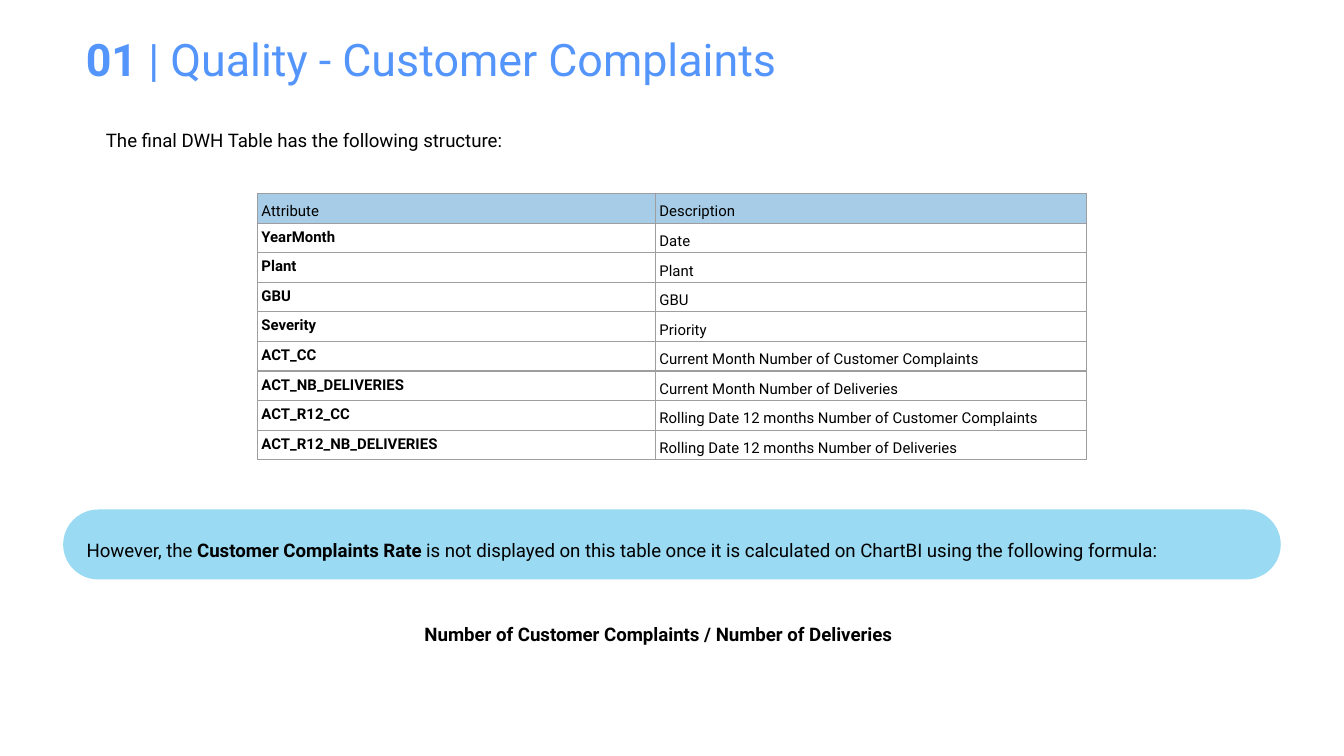
from lxml import etree
from pptx import Presentation
from pptx import util as u
from pptx.dml.color import RGBColor
from pptx.enum import shapes, text
from pptx.oxml import ns

WIDTH = 10
HEIGHT = WIDTH * 9 / 16
GRID = 100  # columns and rows across the slide
FONT = "Roboto"
BLACK, TITLE_BLUE, HEADER_BLUE = "000000", "5495FC", "A6CCE7"
BANNER_BLUE, BORDER_GREY = "81D1F0", "9E9E9E"
TOP, MIDDLE, BOTTOM = (text.MSO_ANCHOR.TOP, text.MSO_ANCHOR.MIDDLE,
                       text.MSO_ANCHOR.BOTTOM)
ATTRIBUTES = [
    ("Attribute", "Description"),
    ("YearMonth", "Date"),
    ("Plant", "Plant"),
    ("GBU", "GBU"),
    ("Severity", "Priority"),
    ("ACT_CC", "Current Month Number of Customer Complaints"),
    ("ACT_NB_DELIVERIES", "Current Month Number of Deliveries"),
    ("ACT_R12_CC", "Rolling Date 12 months Number of Customer Complaints"),
    ("ACT_R12_NB_DELIVERIES", "Rolling Date 12 months Number of Deliveries"),
]


def color(value):
    return RGBColor.from_string(value)


def grid_box(left, top, width, height):
    """Turn grid columns and rows into lengths."""
    return [u.Inches(part * side / GRID) for part, side in
            zip((left, top, width, height), (WIDTH, HEIGHT) * 2)]


def apply(target, values):
    for name, value in values.items():
        setattr(target, name, value)


def margins(horizontal, vertical):
    return {"margin_left": u.Inches(horizontal), "margin_right": u.Inches(horizontal),
            "margin_top": u.Inches(vertical), "margin_bottom": u.Inches(vertical)}


def write(frame, runs, size, ink=BLACK, spacing=1.0):
    """Fill the first paragraph with (words, bold) runs."""
    paragraph = frame.paragraphs[0]
    apply(paragraph, {"alignment": text.PP_ALIGN.LEFT, "line_spacing": spacing})
    for words, bold in runs:
        run = paragraph.add_run()
        run.text = words
        apply(run.font, {"name": FONT, "size": u.Pt(size), "bold": bold})
        run.font.color.rgb = color(ink)


def add_text(slide, box, runs, size, ink=BLACK, anchor=TOP):
    frame = slide.shapes.add_textbox(*box).text_frame
    apply(frame, {"word_wrap": True, "vertical_anchor": anchor, **margins(0.1, 0.1)})
    write(frame, runs, size, ink)


def add_borders(cell):
    properties = cell._tc.get_or_add_tcPr()
    for position, side in enumerate(("a:lnL", "a:lnR", "a:lnT", "a:lnB")):
        line = etree.Element(ns.qn(side), w=str(u.Pt(0.75)))
        fill = etree.SubElement(line, ns.qn("a:solidFill"))
        etree.SubElement(fill, ns.qn("a:srgbClr"), val=BORDER_GREY)
        properties.insert(position, line)


def add_attribute_table(slide, box):
    left, top, width, height = box
    table = slide.shapes.add_table(len(ATTRIBUTES), 2, *box).table
    apply(table, {"first_row": False, "horz_banding": False})
    table.columns[0].width = int(width * 0.48)
    table.columns[1].width = width - table.columns[0].width
    for row in table.rows:
        row.height = height // len(ATTRIBUTES)
    for row, words in enumerate(ATTRIBUTES):
        for column, label in enumerate(words):
            cell = table.cell(row, column)
            is_header, is_name = row == 0, row > 0 and column == 0
            apply(cell, {"vertical_anchor": TOP if is_name else BOTTOM,
                         **margins(0.03, 0.02)})
            if is_header:
                cell.fill.solid()
                cell.fill.fore_color.rgb = color(HEADER_BLUE)
            else:
                cell.fill.background()
            write(cell.text_frame, [(label, is_name)], 8,
                  spacing=1.0 if is_header else 1.15)
            add_borders(cell)


def add_banner(slide, box, runs):
    banner = slide.shapes.add_shape(shapes.MSO_SHAPE.ROUNDED_RECTANGLE, *box)
    banner.adjustments[0] = 0.5
    banner.shadow.inherit = False
    banner.line.fill.background()
    banner.fill.solid()
    banner.fill.fore_color.rgb = color(BANNER_BLUE)
    fill = banner._element.spPr.find(ns.qn("a:solidFill"))
    etree.SubElement(fill[0], ns.qn("a:alpha"), val="80000")
    apply(banner.text_frame, {"word_wrap": True, "vertical_anchor": MIDDLE,
                              **margins(0.1, 0.05)})
    write(banner.text_frame, runs, 10, spacing=1.5)


def add_complaints_slide(presentation):
    slide = presentation.slides.add_slide(presentation.slide_layouts[6])
    add_text(slide, grid_box(5.4, 2, 90.4, 11.5),
             [("01 ", True), ("| Quality - Customer Complaints", False)],
             24, TITLE_BLUE, MIDDLE)
    add_attribute_table(slide, grid_box(19.15, 25.6, 61.7, 35.25))
    add_text(slide, grid_box(6.9, 15.6, 33.3, 6.6),
             [("The final DWH Table has the following structure:", False)], 10)
    add_banner(slide, grid_box(4.7, 67.4, 90.6, 9.25), [
        ("However, the ", False),
        ("Customer Complaints Rate", True),
        (" is not displayed on this table once it is calculated on ChartBI "
         "using the following formula:", False)])
    add_text(slide, grid_box(30.6, 80.9, 38.9, 6.6),
             [("Number of Customer Complaints / Number of Deliveries", True)], 10)


def main():
    presentation = Presentation()
    apply(presentation, {"slide_width": u.Inches(WIDTH),
                         "slide_height": u.Inches(HEIGHT)})
    add_complaints_slide(presentation)
    presentation.save("out.pptx")


if __name__ == "__main__":
    main()
